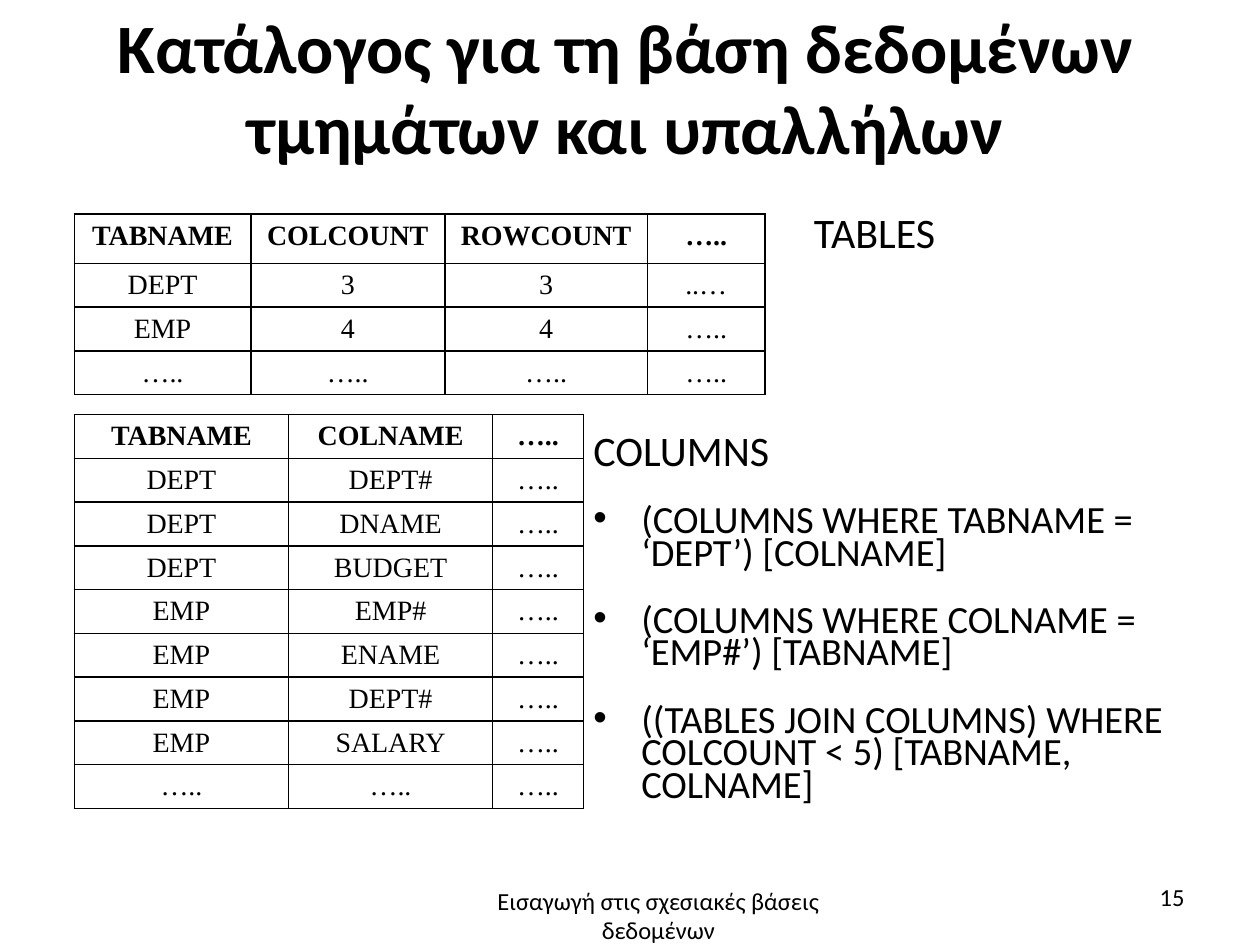
"""Builds the slide on the catalogue of the departments and employees database."""
import pptx
import pptx.dml.color
import pptx.enum.text
import pptx.oxml
import pptx.oxml.ns
import pptx.util

BLACK = pptx.dml.color.RGBColor(0x00, 0x00, 0x00)
WHITE = pptx.dml.color.RGBColor(0xFF, 0xFF, 0xFF)
SANS, SERIF = "Calibri", "Times New Roman"
ALIGN = pptx.enum.text.PP_ALIGN
ANCHOR = pptx.enum.text.MSO_ANCHOR
SLIDE_WIDTH, SLIDE_HEIGHT = pptx.util.Inches(10), pptx.util.Inches(7.5)
COLUMN, ROW = SLIDE_WIDTH / 100, SLIDE_HEIGHT / 75
DOTS = "….."

TABLES_ROWS = [
    ("TABNAME", "COLCOUNT", "ROWCOUNT", DOTS),
    ("DEPT", "3", "3", "..…"),
    ("EMP", "4", "4", DOTS),
    (DOTS,) * 4,
]
COLUMNS_ROWS = [
    ("TABNAME", "COLNAME", DOTS),
    *[("DEPT", name, DOTS) for name in ("DEPT#", "DNAME", "BUDGET")],
    *[("EMP", name, DOTS) for name in ("EMP#", "ENAME", "DEPT#", "SALARY")],
    (DOTS,) * 3,
]
QUERIES = [
    "(COLUMNS WHERE TABNAME = ‘DEPT’) [COLNAME]",
    "(COLUMNS WHERE COLNAME = ‘EMP#’) [TABNAME]",
    "((TABLES JOIN COLUMNS) WHERE COLCOUNT < 5) [TABNAME, COLNAME]",
]


def cols(count):
    """Return the width of a number of grid columns."""
    return pptx.util.Emu(round(count * COLUMN))


def rows(count):
    """Return the height of a number of grid rows."""
    return pptx.util.Emu(round(count * ROW))


def place(part, box):
    """Move a placeholder into a box of the grid."""
    left, top, width, height = box
    part.left, part.top = cols(left), rows(top)
    part.width, part.height = cols(width), rows(height)


def write(paragraph, text, size, font=SANS, bold=False, align=None):
    """Set the text of a paragraph and format it."""
    paragraph.text = text
    paragraph.alignment = align
    for run in paragraph.runs:
        run.font.size = pptx.util.Pt(size)
        run.font.name = font
        run.font.bold = bold
        run.font.color.rgb = BLACK


def add_heading(slide, box, text):
    """Fill the title placeholder."""
    heading = slide.shapes.title
    place(heading, box)
    frame = heading.text_frame
    frame.auto_size = pptx.enum.text.MSO_AUTO_SIZE.NONE
    frame.vertical_anchor = ANCHOR.MIDDLE
    frame.margin_left = frame.margin_right = frame.margin_bottom = 0
    frame.margin_top = rows(0.2)
    write(frame.paragraphs[0], text, 39.6, bold=True, align=ALIGN.CENTER)
    frame.paragraphs[0].line_spacing = 0.98


def border(cell):
    """Draw a thin black line on each side of a cell."""
    properties = cell._tc.get_or_add_tcPr()
    for side in ("lnL", "lnR", "lnT", "lnB"):
        properties.append(pptx.oxml.parse_xml(
            f'<a:{side} {pptx.oxml.ns.nsdecls("a")} w="12700"><a:solidFill>'
            f'<a:srgbClr val="{BLACK}"/></a:solidFill></a:{side}>'))


def add_catalogue(slide, left, top, widths, header_height, content):
    """Add a bordered table whose first row is bold."""
    row_height = 3.4
    height = header_height + row_height * (len(content) - 1)
    catalogue = slide.shapes.add_table(
        len(content), len(widths), cols(left), rows(top),
        cols(sum(widths)), rows(height)).table
    catalogue.first_row = catalogue.horz_banding = False
    for column, width in zip(catalogue.columns, widths):
        column.width = cols(width)
    for index, entries in enumerate(content):
        catalogue.rows[index].height = rows(row_height if index else header_height)
        for position, entry in enumerate(entries):
            cell = catalogue.cell(index, position)
            write(cell.text_frame.paragraphs[0], entry, 16, SERIF,
                  bold=index == 0, align=ALIGN.CENTER)
            border(cell)
            cell.fill.background()


def add_queries(slide, box):
    """Fill the body placeholder with the table names and the queries."""
    body = slide.placeholders[1]
    place(body, box)
    frame = body.text_frame
    frame.auto_size = pptx.enum.text.MSO_AUTO_SIZE.NONE
    frame.vertical_anchor = ANCHOR.TOP
    hanging = cols(3.8)
    lines = [("TABLES", 24, 5, cols(17.5), 0, False),
             ("COLUMNS", 24, 104, 0, 0, False)]
    lines += [(query, 22, 20, hanging, -hanging, True) for query in QUERIES]
    for index, (text, size, gap, margin, indent, bulleted) in enumerate(lines):
        paragraph = frame.add_paragraph() if index else frame.paragraphs[0]
        write(paragraph, text, size, align=ALIGN.LEFT)
        paragraph.line_spacing = 0.7
        paragraph.space_before = pptx.util.Pt(gap)
        properties = paragraph._p.get_or_add_pPr()
        properties.set("marL", str(int(margin)))
        properties.set("indent", str(int(indent)))
        bullet = 'buChar char="•"' if bulleted else "buNone"
        properties.append(pptx.oxml.parse_xml(
            f'<a:{bullet} {pptx.oxml.ns.nsdecls("a")}/>'))


def add_footer(slide, box, text, align):
    """Add one text of the bottom line."""
    left, top, width, height = box
    footer = slide.shapes.add_textbox(cols(left), rows(top), cols(width), rows(height))
    footer.text_frame.word_wrap = True
    write(footer.text_frame.paragraphs[0], text, 14, align=align)


def main():
    """Build and save the presentation."""
    deck = pptx.Presentation()
    deck.slide_width, deck.slide_height = SLIDE_WIDTH, SLIDE_HEIGHT
    slide = deck.slides.add_slide(deck.slide_layouts[1])
    slide.background.fill.solid()
    slide.background.fill.fore_color.rgb = WHITE
    add_heading(slide, (4.3, 0.1, 90.7, 13.8),
                "Κατάλογος για τη βάση δεδομένων τμημάτων και υπαλλήλων")
    add_catalogue(slide, 5.9, 17, (14, 15.4, 16.1, 9.3), 3.9, TABLES_ROWS)
    add_catalogue(slide, 5.9, 32.9, (17, 16.2, 7.2), 3.4, COLUMNS_ROWS)
    add_queries(slide, (46.1, 17, 48.9, 53.3))
    add_footer(slide, (34.8, 69.8, 34.9, 5.5),
               "Εισαγωγή στις σχεσιακές βάσεις δεδομένων", ALIGN.CENTER)
    add_footer(slide, (71.7, 69.5, 23.3, 4), "15", ALIGN.RIGHT)
    deck.save("out.pptx")


if __name__ == "__main__":
    main()
